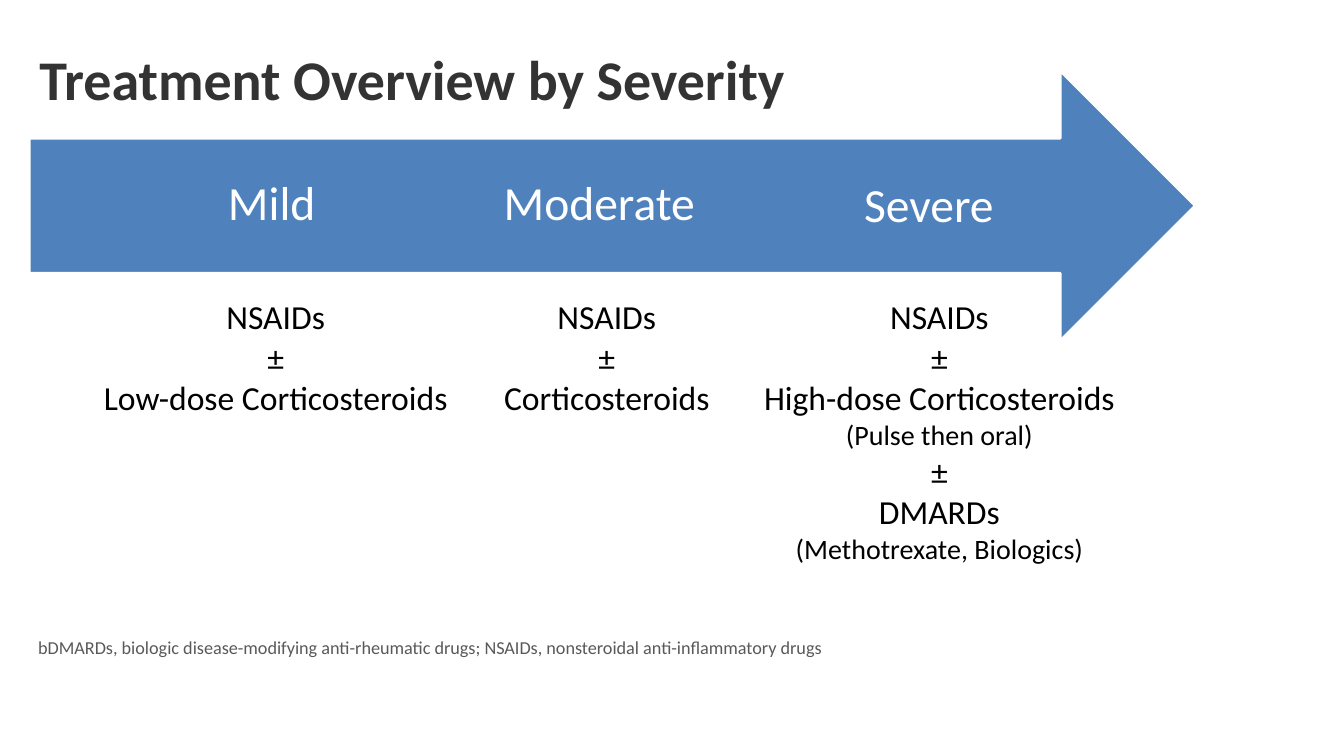
from pptx import Presentation
from pptx.dml.color import RGBColor
from pptx.enum.shapes import MSO_SHAPE
from pptx.enum.text import MSO_ANCHOR, MSO_AUTO_SIZE, PP_ALIGN
from pptx.util import Pt

FONT = "Calibri"
NOTE_SIZE = 20
DRUG_SIZE = 24

# Per severity: label left and top, drug box left and width, drug lines
SEVERITIES = [
    ("Mild", 88.6, 98.6, 65.5, 262.8,
     ["NSAIDs", "±", "Low-dose Corticosteroids"]),
    ("Moderate", 322.6, 98.6, 352.1, 162.7,
     ["NSAIDs", "±", "Corticosteroids"]),
    ("Severe", 558, 99.4, 537.1, 267.8,
     ["NSAIDs", "±", "High-dose Corticosteroids", "(Pulse then oral)",
      "±", "DMARDs", "(Methotrexate, Biologics)"]),
]


def color(hex_text):
    return RGBColor.from_string(hex_text)


def style(para, size, hex_text, align=PP_ALIGN.LEFT, spacing=0.9, bold=False):
    para.alignment = align
    para.line_spacing = spacing
    para.font.name = FONT
    para.font.size = Pt(size)
    para.font.bold = bold
    para.font.color.rgb = color(hex_text)


def add_title(page, text):
    title = page.shapes.title
    title.left, title.top = Pt(20.9), Pt(13.7)
    title.width, title.height = Pt(920.2), Pt(90)
    frame = title.text_frame
    frame.text = text
    frame.vertical_anchor = MSO_ANCHOR.MIDDLE
    style(frame.paragraphs[0], 40, "333333", bold=True)


def add_arrow(page):
    arrow = page.shapes.add_shape(
        MSO_SHAPE.RIGHT_ARROW, Pt(20.9), Pt(50.4), Pt(833), Pt(193))
    arrow.shadow.inherit = False
    arrow.fill.solid()
    arrow.fill.fore_color.rgb = color("4F81BD")
    arrow.line.color.rgb = color("FFFFFF")
    arrow.line.width = Pt(2)


def add_text(page, left, top, width, height, lines):
    box = page.shapes.add_textbox(Pt(left), Pt(top), Pt(width), Pt(height))
    frame = box.text_frame
    frame.word_wrap = True
    frame.text = "\n".join(lines)
    return frame


def add_label(page, text, left, top):
    frame = add_text(page, left, top, 211, 96.5, [text])
    frame.vertical_anchor = MSO_ANCHOR.MIDDLE
    frame.margin_left = frame.margin_right = 0
    frame.margin_top = frame.margin_bottom = Pt(27.4)
    style(frame.paragraphs[0], 34, "FFFFFF", PP_ALIGN.CENTER)


def add_drugs(page, left, width, lines):
    height = 94.3 if len(lines) == 3 else 205.9
    frame = add_text(page, left, 208.1, width, height, lines)
    frame.word_wrap = False
    frame.auto_size = MSO_AUTO_SIZE.SHAPE_TO_FIT_TEXT
    for para in frame.paragraphs:
        size = NOTE_SIZE if para.text.startswith("(") else DRUG_SIZE
        style(para, size, "000000", PP_ALIGN.CENTER, spacing=1.0)


def main():
    deck = Presentation()
    deck.slide_width, deck.slide_height = Pt(960), Pt(540)
    page = deck.slides.add_slide(deck.slide_layouts[5])

    # Title and severity arrow
    add_title(page, "Treatment Overview by Severity")
    add_arrow(page)

    # Severity labels with their treatments
    for name, label_left, label_top, left, width, lines in SEVERITIES:
        add_label(page, name, label_left, label_top)
        add_drugs(page, left, width, lines)

    # Abbreviations
    footnote = add_text(page, 20.2, 452.9, 920.2, 21.6, [
        "bDMARDs, biologic disease-modifying anti-rheumatic drugs; "
        "NSAIDs, nonsteroidal anti-inflammatory drugs"])
    style(footnote.paragraphs[0], 13, "595959")

    deck.save("out.pptx")


if __name__ == "__main__":
    main()
